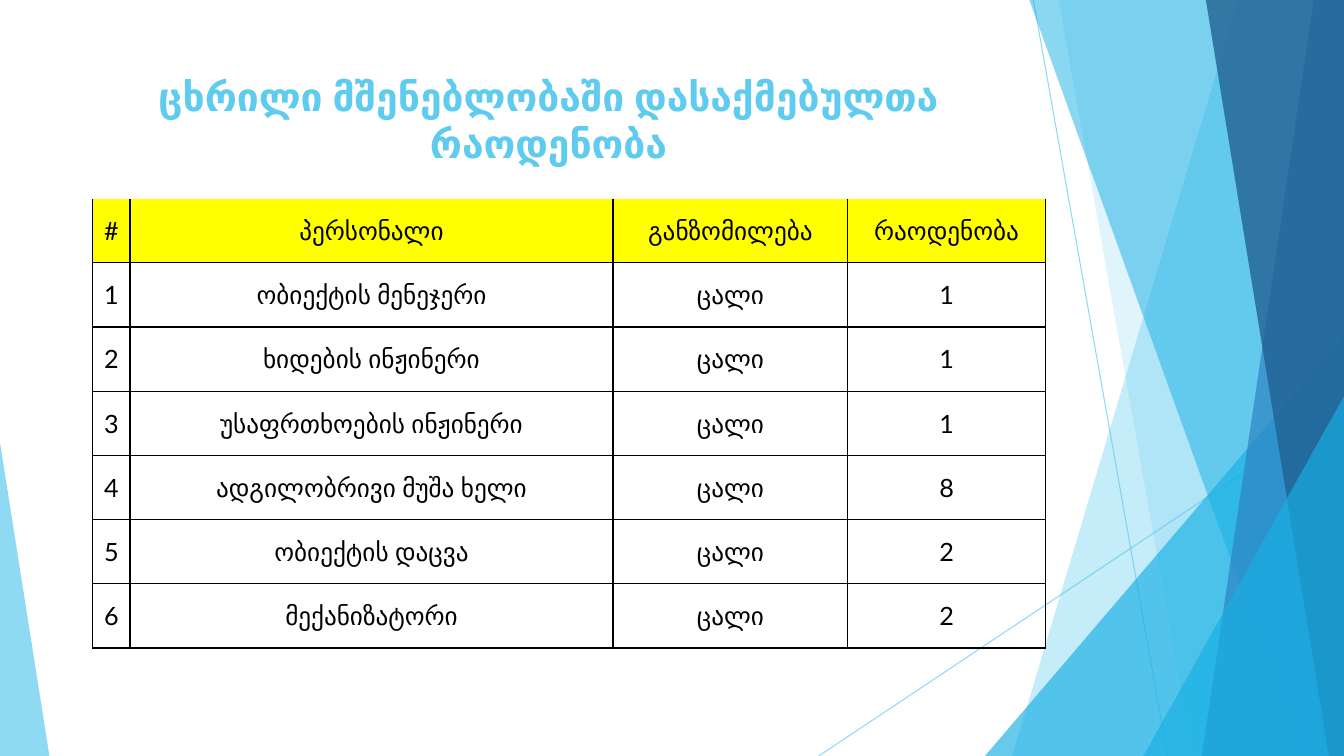
import pptx
import pptx.dml.color
import pptx.enum.shapes
import pptx.enum.text
import pptx.oxml.ns
import pptx.util
from lxml import etree

COLOURS = {"sky": "5FCBEF", "cyan": "17B0E4", "blue": "2E83C3", "navy": "226292",
           "header": "FFFF00", "ink": "000000"}
CENTER = pptx.enum.text.PP_ALIGN.CENTER
ANCHOR = pptx.enum.text.MSO_ANCHOR

HEADING = "ცხრილი მშენებლობაში დასაქმებულთა რაოდენობა"
HEADERS = ["#", "პერსონალი", "განზომილება", "რაოდენობა"]
UNIT = "ცალი"
STAFF = [("ობიექტის მენეჯერი", 1), ("ხიდების ინჟინერი", 1), ("უსაფრთხოების ინჟინერი", 1),
         ("ადგილობრივი მუშა ხელი", 8), ("ობიექტის დაცვა", 2), ("მექანიზატორი", 2)]


def rgb(name):
    return pptx.dml.color.RGBColor.from_string(COLOURS[name])


def apply(target, values):
    for name, value in values.items():
        setattr(target, name, value)


def add_node(parent, tag, **attributes):
    return etree.SubElement(parent, pptx.oxml.ns.qn(tag), attributes)


class SlideBuilder:
    TITLE = {"name": "Karla", "size": pptx.util.Pt(27.9), "bold": True}
    BODY = {"name": "Lato", "size": pptx.util.Pt(18), "bold": False}
    CELL = {"vertical_anchor": ANCHOR.MIDDLE,
            "margin_left": pptx.util.Inches(0.07), "margin_right": pptx.util.Inches(0.07),
            "margin_top": 0, "margin_bottom": 0}

    def __init__(self, deck):
        self.deck = deck
        self.page = deck.slides.add_slide(deck.slide_layouts[5])

    def x(self, percent):
        return round(self.deck.slide_width * percent / 100)

    def y(self, percent):
        return round(self.deck.slide_height * percent / 100)

    def area(self, left, top, width, height):
        return self.x(left), self.y(top), self.x(width), self.y(height)

    def add_text(self, frame, text, style, colour):
        para = frame.paragraphs[0]
        para.alignment = CENTER
        span = para.add_run()
        span.text = text
        apply(span.font, style)
        span.font.color.rgb = rgb(colour)

    def fade(self, shape, opacity):
        for node in list(shape._element.spPr.iter(pptx.oxml.ns.qn("a:srgbClr"))):
            add_node(node, "a:alpha", val=str(opacity * 1000))

    def paint(self, shape, colour, opacity):
        shape.shadow.inherit = False
        shape.fill.solid()
        shape.fill.fore_color.rgb = rgb(colour)
        shape.line.fill.background()
        self.fade(shape, opacity)

    def title(self, text, *area):
        box = self.page.shapes.title
        apply(box, dict(zip(("left", "top", "width", "height"), self.area(*area))))
        apply(box.text_frame, {"word_wrap": True, "vertical_anchor": ANCHOR.TOP,
                               "auto_size": pptx.enum.text.MSO_AUTO_SIZE.NONE})
        self.add_text(box.text_frame, text, self.TITLE, "sky")

    def line(self, x1, y1, x2, y2):
        line = self.page.shapes.add_connector(
            pptx.enum.shapes.MSO_CONNECTOR.STRAIGHT,
            self.x(x1), self.y(y1), self.x(x2), self.y(y2))
        line.line.width = pptx.util.Pt(0.75)
        line.line.color.rgb = rgb("sky")
        self.fade(line, 70)
        add_node(line._element.spPr, "a:effectLst")

    def ribbon(self, top, bottom, colour, opacity):
        corners = [(self.x(x), self.y(y))
                   for x, y in [(top, 0), (100, 0), (100, 100), (bottom, 100)]]
        outline = self.page.shapes.build_freeform(*corners[0])
        outline.add_line_segments(corners[1:], close=True)
        self.paint(outline.convert_to_shape(), colour, opacity)

    def triangle(self, left, top, width, apex, colour, opacity):
        shape = self.page.shapes.add_shape(
            pptx.enum.shapes.MSO_SHAPE.ISOSCELES_TRIANGLE,
            *self.area(left, top, width, 100 - top))
        shape.adjustments[0] = apex
        self.paint(shape, colour, opacity)

    def border(self, cell, sides):
        properties = cell._tc.get_or_add_tcPr()
        for side in "LRTB":
            edge = add_node(properties, f"a:ln{side}", w=str(pptx.util.Pt(1)))
            if side in sides:
                fill = add_node(edge, "a:solidFill")
                add_node(fill, "a:srgbClr", val=COLOURS["ink"])
            else:
                add_node(edge, "a:noFill")

    def table(self, rows, widths, left, top, height):
        table = self.page.shapes.add_table(
            len(rows), len(widths), *self.area(left, top, sum(widths), height)).table
        table.horz_banding = False
        for column, width in zip(table.columns, widths):
            column.width = self.x(width)
        for r, values in enumerate(rows):
            table.rows[r].height = self.y(height / len(rows))
            for c, value in enumerate(values):
                cell = table.cell(r, c)
                apply(cell, self.CELL)
                self.border(cell, "LRTB" if r else "LRB")
                if r:
                    cell.fill.background()
                else:
                    cell.fill.solid()
                    cell.fill.fore_color.rgb = rgb("header")
                self.add_text(cell.text_frame, str(value), self.BODY, "ink")


def main():
    deck = pptx.Presentation()
    deck.slide_width = pptx.util.Inches(13.33)
    deck.slide_height = pptx.util.Inches(7.5)
    slide = SlideBuilder(deck)

    slide.line(76.89, 0, 86.87, 100)
    slide.line(100, 53.73, 60.92, 100)
    slide.ribbon(92.12, 75.32, "sky", 36)
    slide.ribbon(78.77, 88.75, "sky", 20)
    slide.triangle(73.29, 44.4, 26.71, 1, "cyan", 66)
    slide.ribbon(76.59, 96.85, "cyan", 50)
    slide.ribbon(97.75, 89.42, "blue", 70)
    slide.ribbon(89.72, 98.87, "navy", 80)
    slide.triangle(85.07, 52.4, 14.93, 1, "cyan", 66)
    slide.triangle(0, 58.53, 3.68, 0, "sky", 70)

    slide.title(HEADING, 5.55, 8.93, 70.52, 13.2)
    rows = [HEADERS] + [(number, role, UNIT, count)
                        for number, (role, count) in enumerate(STAFF, 1)]
    slide.table(rows, [2.78, 35.93, 17.48, 14.7], 6.9, 26.27, 59.47)
    deck.save("out.pptx")


if __name__ == "__main__":
    main()
